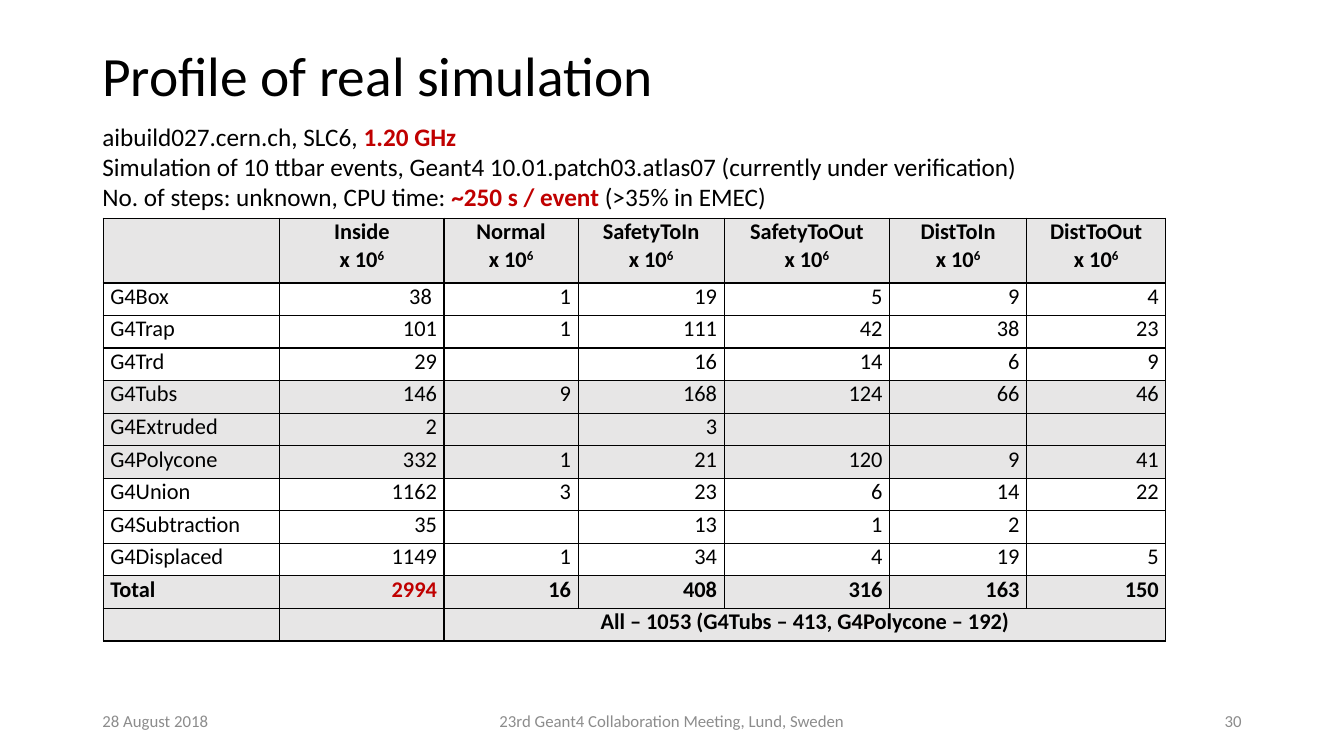
from lxml.etree import SubElement
from pptx import Presentation
from pptx.dml.color import RGBColor
from pptx.enum.text import MSO_ANCHOR as Anchor, PP_ALIGN as Align
from pptx.oxml.ns import qn
from pptx.util import Cm, Pt

BLACK = RGBColor(0x00, 0x00, 0x00)
RED = RGBColor(0xC0, 0x00, 0x00)
GREY = RGBColor(0x8C, 0x8C, 0x8C)
SHADE = RGBColor(0xE7, 0xE6, 0xE6)

METHODS = ["Inside", "Normal", "SafetyToIn", "SafetyToOut", "DistToIn", "DistToOut"]
CALLS = [
    ["G4Box", "38 ", "1", "19", "5", "9", "4"],
    ["G4Trap", "101", "1", "111", "42", "38", "23"],
    ["G4Trd", "29", "", "16", "14", "6", "9"],
    ["G4Tubs", "146", "9", "168", "124", "66", "46"],
    ["G4Extruded", "2", "", "3", "", "", ""],
    ["G4Polycone", "332", "1", "21", "120", "9", "41"],
    ["G4Union", "1162", "3", "23", "6", "14", "22"],
    ["G4Subtraction", "35", "", "13", "1", "2", ""],
    ["G4Displaced", "1149", "1", "34", "4", "19", "5"],
    ["Total", "2994", "16", "408", "316", "163", "150"],
]
SUMMARY = "All – 1053 (G4Tubs – 413, G4Polycone – 192)"
SHADED_SOLIDS = {"G4Tubs", "G4Extruded", "G4Polycone", "Total"}
COLUMN_WIDTHS = [4.45, 4.14, 3.38, 3.68, 4.17, 3.45, 3.51]
HEADER_HEIGHT, ROW_HEIGHT = 1.63, 0.82
LEFT, WIDTH = 2.33, 29.21
SETUP = [
    [("aibuild027.cern.ch, SLC6, ", False), ("1.20 GHz", True)],
    [("Simulation of 10 ttbar events, Geant4 10.01.patch03.atlas07 "
      "(currently under verification) \vNo. of steps: unknown, CPU time: ", False),
     ("~250 s / event ", True), ("(>35% in EMEC)", False)],
]


class ProfileSlide:
    """Draws text boxes and bordered tables in one style on the current slide."""

    def __init__(self, slide, font="Calibri"):
        self.slide = slide
        self.font = font

    def format_run(self, run, size, color=BLACK, bold=False):
        run.font.name = self.font
        run.font.size = Pt(size)
        run.font.bold = bold
        run.font.color.rgb = color

    def text(self, left, top, width, height, lines, size, color=BLACK,
             align=Align.LEFT, anchor=Anchor.MIDDLE, spacing=1.0):
        box = self.slide.shapes.add_textbox(Cm(left), Cm(top), Cm(width), Cm(height))
        frame = box.text_frame
        frame.word_wrap = True
        frame.vertical_anchor = anchor
        for number, segments in enumerate(lines):
            paragraph = frame.add_paragraph() if number else frame.paragraphs[0]
            paragraph.alignment = align
            paragraph.line_spacing = spacing
            paragraph.text = segments[0][0]
            for run in paragraph.runs:
                self.format_run(run, size, color)
            for words, strong in segments[1:]:
                run = paragraph.add_run()
                run.text = words
                self.format_run(run, size, RED if strong else color, strong)

    def table(self, left, top, widths, heights):
        frame = self.slide.shapes.add_table(
            len(heights), len(widths), Cm(left), Cm(top), Cm(sum(widths)), Cm(sum(heights)))
        grid = frame.table
        grid.first_row = grid.horz_banding = False
        for column, width in zip(grid.columns, widths):
            column.width = Cm(width)
        for row, height in zip(grid.rows, heights):
            row.height = Cm(height)
        return grid

    def border(self, cell):
        properties = cell._tc.get_or_add_tcPr()
        for side in ("a:lnL", "a:lnR", "a:lnT", "a:lnB"):
            line = SubElement(properties, qn(side), w=str(Pt(1)))
            solid = SubElement(line, qn("a:solidFill"))
            SubElement(solid, qn("a:srgbClr"), val=str(BLACK))

    def cell(self, cell, words, align, shaded, bold=False, color=BLACK, exponent=""):
        cell.margin_left = cell.margin_right = Cm(0.18)
        cell.margin_top = cell.margin_bottom = 0
        self.border(cell)
        if shaded:
            cell.fill.solid()
            cell.fill.fore_color.rgb = SHADE
        else:
            cell.fill.background()
        paragraph = cell.text_frame.paragraphs[0]
        paragraph.text = words
        paragraph.alignment = align
        paragraph.font.size = Pt(16)
        if exponent:
            power = paragraph.add_run()
            power.text = exponent
            power.font._element.set("baseline", "30000")
        for run in paragraph.runs:
            self.format_run(run, 16, color, bold)


def main():
    deck = Presentation()
    deck.slide_width, deck.slide_height = Cm(33.87), Cm(19.05)
    page = ProfileSlide(deck.slides.add_slide(deck.slide_layouts[6]))

    page.text(LEFT, 1.02, WIDTH, 1.9, [[("Profile of real simulation", False)]], 39.6, spacing=0.9)

    heights = [HEADER_HEIGHT] + [ROW_HEIGHT] * (len(CALLS) + 1)
    profile = page.table(2.6, 5.5, COLUMN_WIDTHS, heights)
    page.cell(profile.cell(0, 0), "", Align.LEFT, True)
    for column, method in enumerate(METHODS, 1):
        page.cell(profile.cell(0, column), f"{method}\vx 10", Align.CENTER, True, True, exponent="6")
    for row, counts in enumerate(CALLS, 1):
        solid = counts[0]
        for column, count in enumerate(counts):
            page.cell(profile.cell(row, column), count,
                      Align.RIGHT if column else Align.LEFT,
                      solid in SHADED_SOLIDS, solid == "Total",
                      RED if count == "2994" else BLACK)
    last_row, last_column = len(CALLS) + 1, len(METHODS)
    for column in range(last_column + 1):
        page.cell(profile.cell(last_row, column), SUMMARY if column == 2 else "",
                  Align.CENTER, True, True)
    profile.cell(last_row, 2).merge(profile.cell(last_row, last_column))

    page.text(LEFT, 2.92, WIDTH, 2.57, SETUP, 18, anchor=Anchor.TOP)

    footers = [
        (LEFT, 7.62, "28 August 2018", Align.LEFT),
        (11.22, 11.43, "23rd Geant4 Collaboration Meeting, Lund, Sweden", Align.CENTER),
        (23.92, 7.62, "30", Align.RIGHT),
    ]
    for left, width, words, align in footers:
        page.text(left, 17.66, width, 1.01, [[(words, False)]], 12, GREY, align)

    deck.save("out.pptx")


if __name__ == "__main__":
    main()
